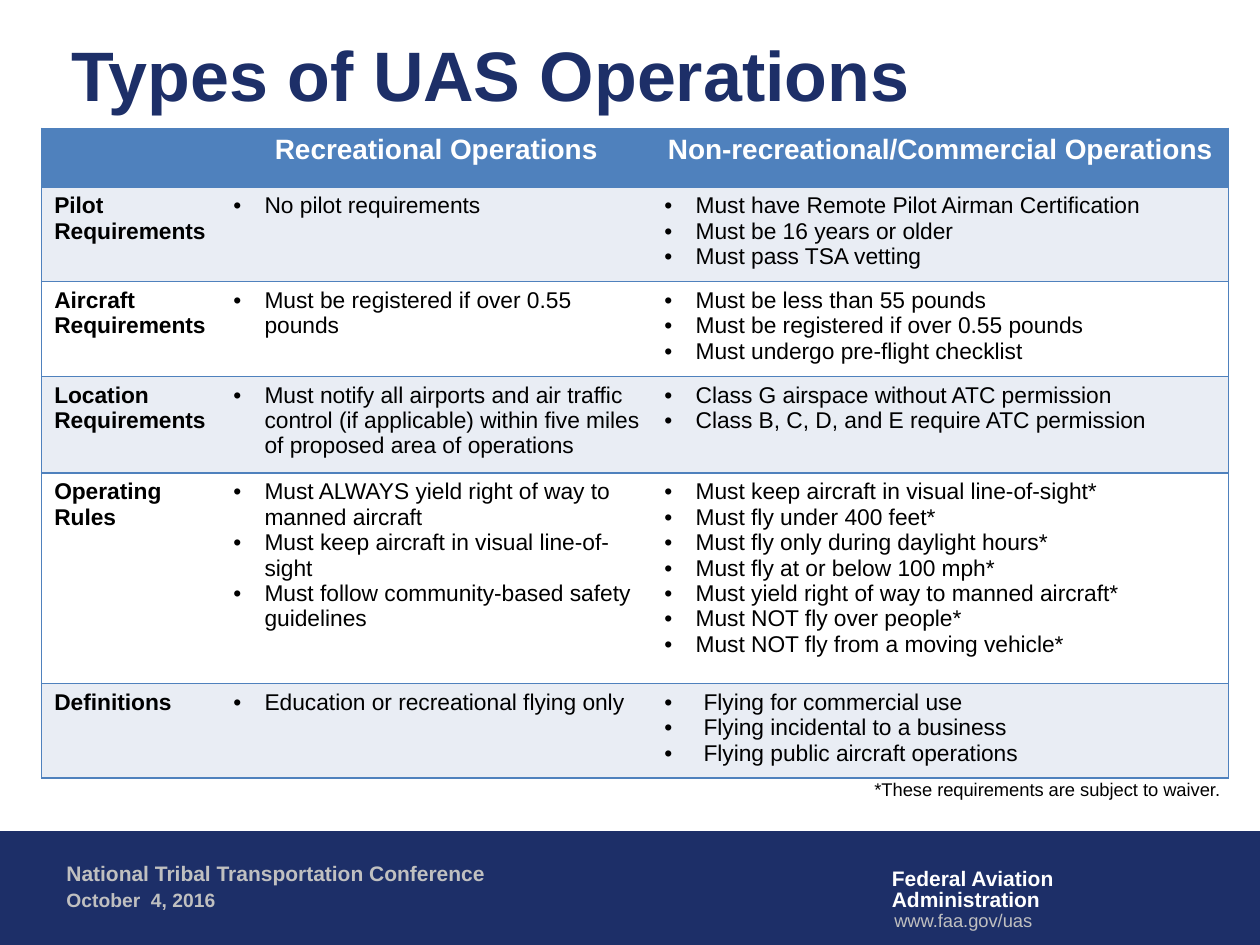
from lxml.etree import SubElement
from pptx import Presentation
from pptx.dml.color import RGBColor
from pptx.enum.shapes import MSO_SHAPE as Shape
from pptx.enum.text import MSO_ANCHOR as Anchor, PP_ALIGN as Align
from pptx.oxml.ns import qn
from pptx.util import Cm, Pt

NAVY = RGBColor(0x1D, 0x2F, 0x68)
BLUE = RGBColor(0x4F, 0x81, 0xBD)
PALE = RGBColor(0xE9, 0xED, 0xF4)
SILVER = RGBColor(0xC0, 0xC0, 0xC0)
WHITE = RGBColor(0xFF, 0xFF, 0xFF)
BLACK = RGBColor(0, 0, 0)

PLAIN_STYLE = "{2D5ABB26-0587-4C30-8999-92F81FD0307C}"
COLUMNS = (3.61, 8.69, 11.63)
ROW_HEIGHTS = (1.18, 1.88, 1.88, 1.95, 4.24, 1.87)
HEADINGS = ("Recreational Operations", "Non-recreational/Commercial Operations")

# Row label, recreational rules, commercial rules
ROWS = (
    ("Pilot Requirements",
     ("No pilot requirements",),
     ("Must have Remote Pilot Airman Certification",
      "Must be 16 years or older",
      "Must pass TSA vetting")),
    ("Aircraft Requirements",
     ("Must be registered if over 0.55 pounds",),
     ("Must be less than 55 pounds",
      "Must be registered if over 0.55 pounds",
      "Must undergo pre-flight checklist")),
    ("Location Requirements",
     ("Must notify all airports and air traffic control (if applicable) "
      "within five miles of proposed area of operations",),
     ("Class G airspace without ATC permission",
      "Class B, C, D, and E require ATC permission")),
    ("Operating Rules",
     ("Must ALWAYS yield right of way to manned aircraft",
      "Must keep aircraft in visual line-of-sight",
      "Must follow community-based safety guidelines"),
     ("Must keep aircraft in visual line-of-sight*",
      "Must fly under 400 feet*",
      "Must fly only during daylight hours*",
      "Must fly at or below 100 mph*",
      "Must yield right of way to manned aircraft*",
      "Must NOT fly over people*",
      "Must NOT fly from a moving vehicle*")),
    ("Definitions",
     ("Education or recreational flying only",),
     ("Flying for commercial use",
      "Flying incidental to a business",
      "Flying public aircraft operations")),
)


class SlideBuilder:
    """Holds the text style and the current slide."""

    def __init__(self, page, font="Arial"):
        self.page = page
        self.font = font

    def fill_text(self, frame, lines, size, color, bold=False, indent=None, **layout):
        """Fill a text frame, one paragraph a line; indent makes bullets."""
        style = {"name": self.font, "size": Pt(size), "bold": bold}
        for number, line in enumerate(lines):
            para = frame.add_paragraph() if number else frame.paragraphs[0]
            if indent:
                self.bullet(para, Cm(indent))
            for key, value in layout.items():
                setattr(para, key, value)
            span = para.add_run()
            span.text = line
            for key, value in style.items():
                setattr(span.font, key, value)
            span.font.color.rgb = color

    def bullet(self, para, indent):
        props = para._p.get_or_add_pPr()
        props.set("marL", str(indent))
        props.set("indent", str(-indent))
        SubElement(props, qn("a:buFont"), typeface=self.font)
        SubElement(props, qn("a:buChar"), char="•")

    def text(self, place, lines, size, color, wrap=True, anchor=Anchor.TOP, **options):
        box = self.page.shapes.add_textbox(*map(Cm, place))
        frame = box.text_frame
        frame.word_wrap = wrap
        frame.vertical_anchor = anchor
        self.fill_text(frame, lines, size, color, **options)

    def band(self, place, color):
        box = self.page.shapes.add_shape(Shape.RECTANGLE, *map(Cm, place))
        box.shadow.inherit = False
        box.fill.solid()
        box.fill.fore_color.rgb = color
        box.line.color.rgb = color
        box.line.width = Pt(0.75)

    def table(self, left, top, columns, heights):
        """Add a table with row rules and an outer frame."""
        place = (left, top, sum(columns), sum(heights))
        table = self.page.shapes.add_table(
            len(heights), len(columns), *map(Cm, place)).table
        table.horz_banding = False
        table._tbl.tblPr.find(qn("a:tableStyleId")).text = PLAIN_STYLE
        for column, width in zip(table.columns, columns):
            column.width = Cm(width)
        last = len(columns) - 1
        for row_number, (row, height) in enumerate(zip(table.rows, heights)):
            row.height = Cm(height)
            fill = (PALE if row_number % 2 else WHITE) if row_number else BLUE
            for number, cell in enumerate(row.cells):
                sides = ("L" * (number == 0)) + ("R" * (number == last)) + "TB"
                self.borders(cell, sides)
                cell.fill.solid()
                cell.fill.fore_color.rgb = fill
        return table

    def borders(self, cell, sides):
        props = cell._tc.get_or_add_tcPr()
        for side in sides:
            line = SubElement(props, qn(f"a:ln{side}"), w=str(Pt(1)))
            paint = SubElement(line, qn("a:solidFill"))
            SubElement(paint, qn("a:srgbClr"), val=str(BLUE))


def main():
    deck = Presentation()
    deck.slide_width, deck.slide_height = Cm(25.4), Cm(19.05)
    slide = SlideBuilder(deck.slides.add_slide(deck.slide_layouts[6]))

    # Footer
    slide.band((0, 16.76, 25.4, 2.27), NAVY)
    slide.text((17.73, 17.4, 3.81, 1.12), ("Federal Aviation", "Administration"),
               12, WHITE, wrap=False, bold=True, line_spacing=0.85)
    slide.text((1.09, 17.22, 13.28, 0.76), ("National Tribal Transportation Conference",),
               12, SILVER, bold=True)
    slide.text((17.78, 18.21, 6.4, 0.74), ("www.faa.gov/uas",), 10.5, SILVER)
    slide.text((1.09, 17.78, 13.28, 0.74), ("October  4, 2016",), 11, SILVER, bold=True)

    # Title
    slide.text((1.19, 0.64, 23.55, 1.7), ("Types of UAS Operations",), 40, NAVY,
               anchor=Anchor.MIDDLE, bold=True)

    # Comparison table
    table = slide.table(0.84, 2.59, COLUMNS, ROW_HEIGHTS)
    for number, heading in enumerate(HEADINGS, 1):
        slide.fill_text(table.cell(0, number).text_frame, (heading,), 16, WHITE,
                        bold=True, alignment=Align.CENTER)
    for number, (label, *rules) in enumerate(ROWS, 1):
        slide.fill_text(table.cell(number, 0).text_frame, (label,), 13, BLACK, bold=True)
        for column, lines in enumerate(rules, 1):
            wide = label == "Definitions" and column == 2
            slide.fill_text(table.cell(number, column).text_frame, lines, 13, BLACK,
                            indent=0.79 if wide else 0.63)

    # Footnote
    slide.text((14.6, 15.57, 10.36, 0.74), ("*These requirements are subject to waiver. ",),
               10.5, BLACK, alignment=Align.RIGHT)

    deck.save("out.pptx")


if __name__ == "__main__":
    main()
